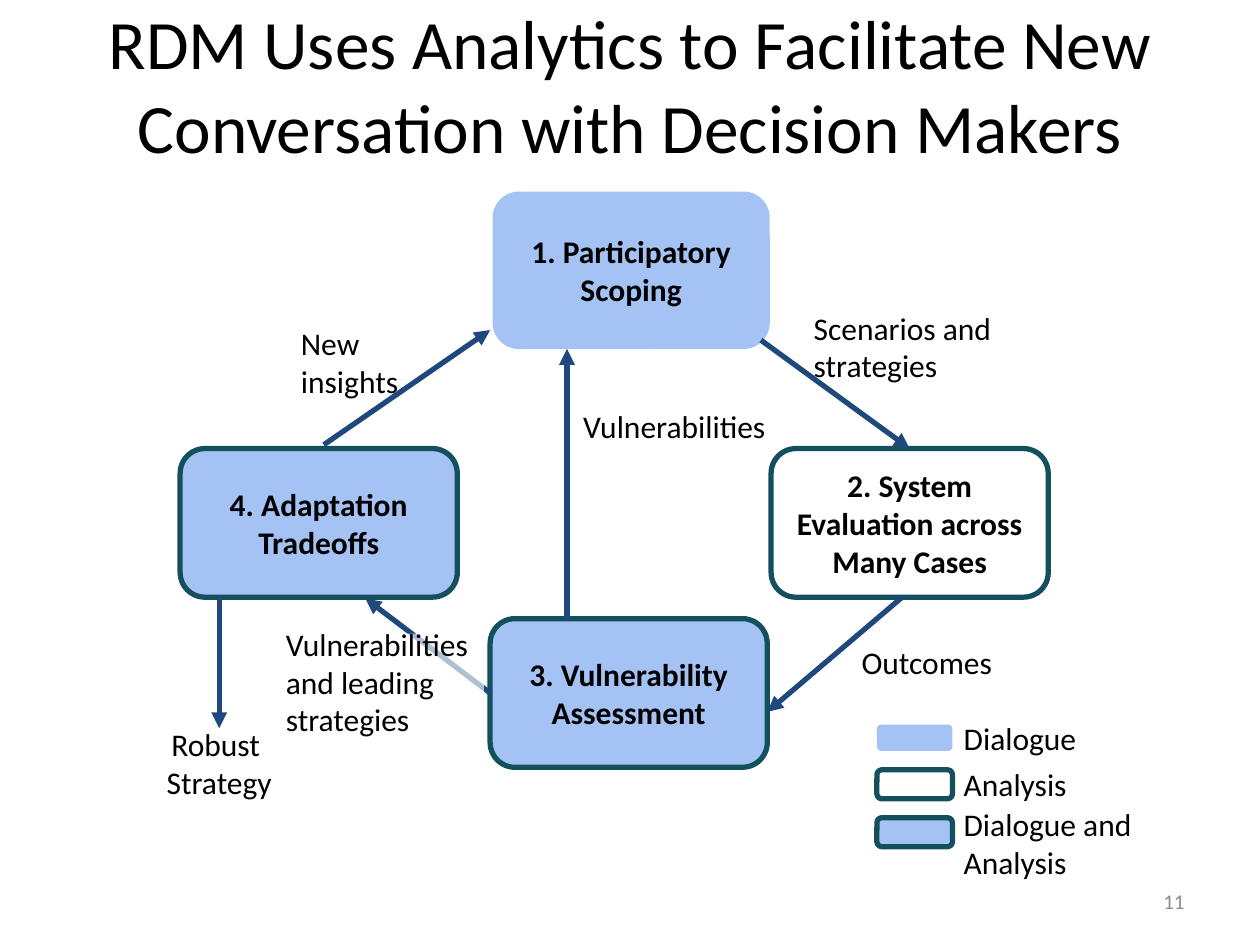
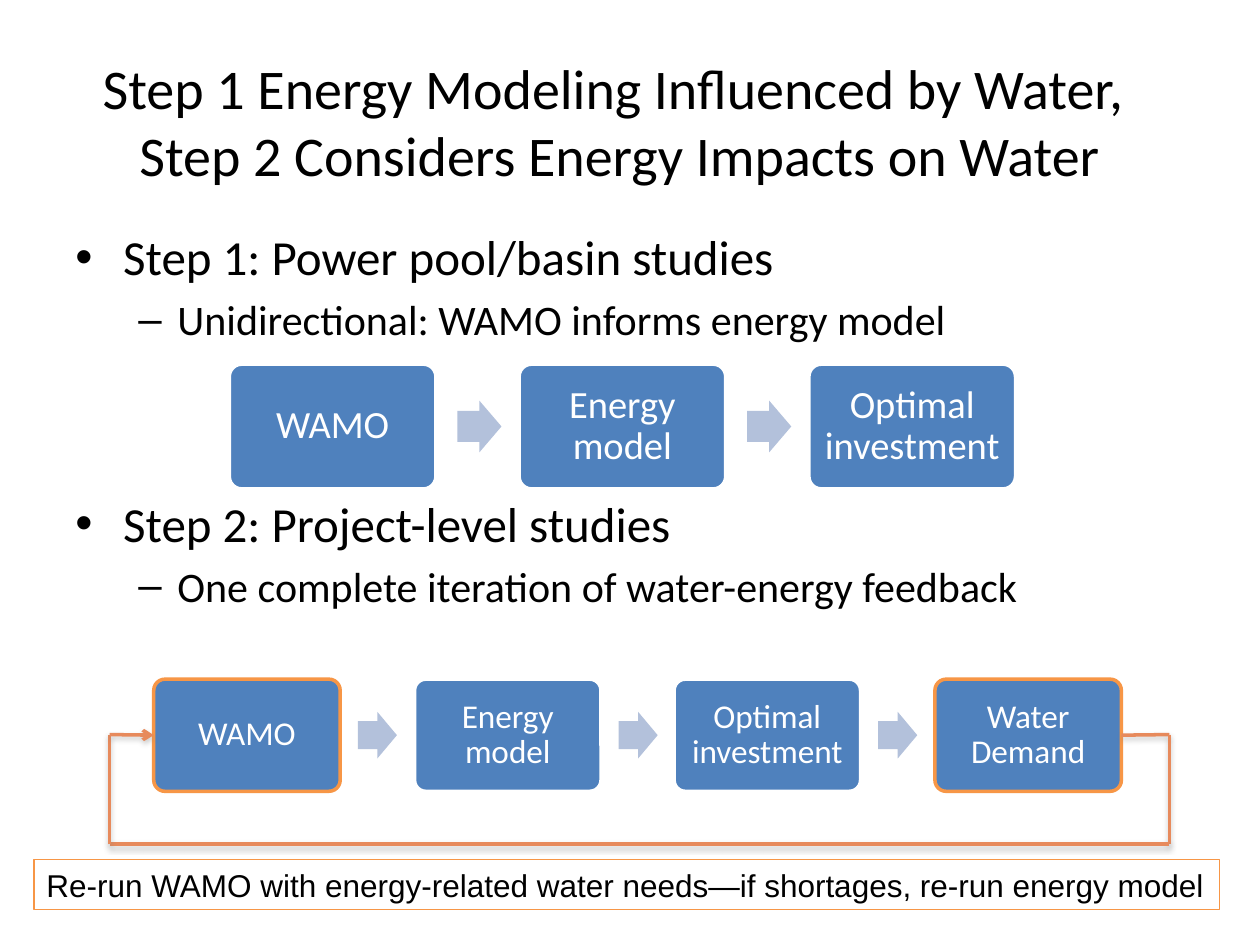
from dataclasses import dataclass
from lxml import etree
from pptx import Presentation, util as u
from pptx.dml.color import RGBColor
from pptx.enum import shapes, text
from pptx.oxml import parse_xml
from pptx.oxml.ns import qn, nsdecls

PX = 9144  # EMU per px, 100 px to the inch


@dataclass(frozen=True)
class Theme:
    font: str = "Calibri"
    note_font: str = "Arial"
    black: str = "000000"
    white: str = "FFFFFF"
    grey: str = "8C8C8C"
    dialogue: str = "A4C2F4"
    analysis: str = "134F5C"
    arrow: str = "1F497D"
    step: str = "4F81BD"
    step_arrow: str = "B3C1DB"
    feedback: str = "F79646"
    loop: str = "E78A5C"
    title: float = 39.6
    title_small: float = 32
    heading: float = 28
    sub: float = 24
    label: float = 18
    small: float = 12


T = Theme()
KIND = shapes.MSO_SHAPE
ALIGN = text.PP_ALIGN
ANCHOR = text.MSO_ANCHOR


def px(*values):
    return [u.Emu(round(v * PX)) for v in values]


def rgb(color):
    return RGBColor.from_string(color)


def write(sp, words, size, color=T.black, bold=False, align=ALIGN.LEFT,
          anchor=ANCHOR.MIDDLE, inset=(10, 10), font=T.font, wrap=True):
    tf = sp.text_frame
    tf.word_wrap = wrap
    tf.vertical_anchor = anchor
    tf.margin_left = tf.margin_right = px(inset[0])[0]
    tf.margin_top = tf.margin_bottom = px(inset[1])[0]
    tf.text = words
    for p in tf.paragraphs:
        p.alignment = align
        for r in p.runs:
            r.font.name, r.font.size, r.font.bold = font, u.Pt(size), bold
            r.font.color.rgb = rgb(color)
    return tf


def label(s, box, words, size=T.label, **style):
    return write(s.shapes.add_textbox(*px(*box)), words, size, **style)


def shape(s, kind, box, fill=None, line=None, width=3, adj=()):
    sp = s.shapes.add_shape(kind, *px(*box))
    sp.shadow.inherit = False
    for i, value in enumerate(adj):
        sp.adjustments[i] = value
    if fill:
        sp.fill.solid()
        sp.fill.fore_color.rgb = rgb(fill)
    else:
        sp.fill.background()
    if line:
        sp.line.color.rgb = rgb(line)
        sp.line.width = u.Pt(width)
    else:
        sp.line.fill.background()
    return sp


def connect(s, start, end, color, width, head=None, shadow=False):
    c = s.shapes.add_connector(shapes.MSO_CONNECTOR.STRAIGHT, *px(*start, *end))
    c.line.color.rgb = rgb(color)
    c.line.width = u.Pt(width)
    if head:
        etree.SubElement(c.line._get_or_add_ln(), qn("a:tailEnd"), type=head)
    effects = etree.SubElement(c._element.spPr, qn("a:effectLst"))
    if shadow:
        effects.append(parse_xml(
            f'<a:outerShdw {nsdecls("a")} blurRad="{u.Pt(3.1)}" dist="{u.Pt(1.6)}"'
            ' dir="5400000" rotWithShape="0"><a:srgbClr val="808080">'
            '<a:alpha val="38000"/></a:srgbClr></a:outerShdw>'))
    return c


def title(s, box, words, size):
    label(s, box, words, size, align=ALIGN.CENTER, inset=(10, 5))


# --- Slide 1: the cycle of steps ---

def cycle(s, x, y):
    # Step boxes
    steps = [
        ("1. Participatory Scoping", 248, 0, 125, T.dialogue, None),
        ("2. System Evaluation across Many Cases", 469, 204, 118, None, T.analysis),
        ("3. Vulnerability Assessment", 246, 339, 118, T.dialogue, T.analysis),
        ("4. Adaptation Tradeoffs", 0, 204, 118, T.dialogue, T.analysis),
    ]
    nodes = []
    for words, dx, dy, h, fill, line in steps:
        sp = shape(s, KIND.ROUNDED_RECTANGLE, (x + dx, y + dy, 220, h), fill, line,
                   adj=[0.167])
        write(sp, words, T.label, bold=True, align=ALIGN.CENTER)
        nodes.append(sp)
    scoping, evaluation, assessment, tradeoffs = nodes

    # Arrows between the steps
    ends = [
        ((461, 118), (579, 204)),
        ((573, 322), (466, 413)),
        ((246, 398), (147, 323)),
        ((114, 201), (246, 110)),
        ((307, 339), (307, 125)),
        ((31, 322), (31, 426)),
    ]
    arrows = [connect(s, (x + x1, y + y1), (x + x2, y + y2), T.arrow, 3, "triangle")
              for (x1, y1), (x2, y2) in ends]
    arrows[0].end_connect(evaluation, 0)
    arrows[2].begin_connect(assessment, 1)

    # Arrow labels
    veil = shape(s, KIND.RECTANGLE, (x + 74, y + 351, 167, 76), T.white)
    color = veil.fill._xPr.find(qn("a:solidFill"))[0]
    etree.SubElement(color, qn("a:alpha"), val="65000")
    write(veil, "Vulnerabilities\nand leading strategies", T.label)
    for words, dx, dy, w, h, align in [
        ("Scenarios and\nstrategies", 493, 85, 165, 76, ALIGN.LEFT),
        ("Outcomes", 531, 335, 140, 76, ALIGN.LEFT),
        ("Vulnerabilities", 310, 161, 172, 50, ALIGN.LEFT),
        ("Robust \nStrategy", -31, 426, 124, 55, ALIGN.CENTER),
        ("New\ninsights", 86, 110, 118, 50, ALIGN.LEFT),
    ]:
        label(s, (x + dx, y + dy, w, h), words, align=align)


def legend(s, x, y):
    for words, dy, h, fill, line, text_dy, w, text_h, anchor in [
        ("Dialogue", 0, 21, T.dialogue, None, -7, 118, 36, ANCHOR.MIDDLE),
        ("Analysis", 36, 23, None, T.analysis, 31, 118, 32, ANCHOR.MIDDLE),
        ("Dialogue and Analysis", 74, 23, T.dialogue, T.analysis, 54, 177, 61,
         ANCHOR.TOP),
    ]:
        shape(s, KIND.ROUNDED_RECTANGLE, (x, y + dy, 60, h), fill, line, adj=[0.167])
        label(s, (x + 59, y + text_dy, w, text_h), words, anchor=anchor)


def cycle_slide(s):
    title(s, (0, 33, 1000, 67),
          "RDM Uses Analytics to Facilitate New Conversation with Decision Makers",
          T.title)
    cycle(s, 143, 152)
    legend(s, 696, 575)
    label(s, (717, 695, 233, 40), "11", T.small, color=T.grey, align=ALIGN.RIGHT,
          inset=(10, 5))


# --- Slide 2: the two modelling steps ---

def outline(s, box):
    items = [  # words, is sub-point, space before
        ("Step 1: Power pool/basin studies", False, 5.6),
        ("Unidirectional: WAMO informs energy model", True, 4.8),
        ("Step 2: Project-level studies", False, 85),
        ("One complete iteration of water-energy feedback", True, 4.8),
    ]
    tf = label(s, box, "\n".join(words for words, _, _ in items), T.heading,
               anchor=ANCHOR.TOP, inset=(10, 5))
    for p, (_, is_sub, before) in zip(tf.paragraphs, items):
        left, hang, mark = (81, 31, "–") if is_sub else (38, 38, "•")
        p.level = int(is_sub)
        p.space_before = u.Pt(before)
        if is_sub:
            p.runs[0].font.size = u.Pt(T.sub)
        pPr = p._p.get_or_add_pPr()
        pPr.set("marL", str(left * PX))
        pPr.set("indent", str(-hang * PX))
        etree.SubElement(pPr, qn("a:buFont"), typeface=T.note_font)
        etree.SubElement(pPr, qn("a:buChar"), char=mark)


def flow(s, box, names, step_size, arrow_size, gap, inset, size, marked=()):
    """Row of equally spaced steps with an arrow in each gap."""
    x, y, w, h = box
    step_w = step_size
    arrow_w, arrow_h = arrow_size
    pitch = (w - step_w) / (len(names) - 1)
    steps = []
    for i, name in enumerate(names):
        left = x + round(i * pitch)
        line = T.feedback if i in marked else T.white
        sp = shape(s, KIND.ROUNDED_RECTANGLE, (left, y, step_w, h), T.step, line, 2,
                   adj=[0.1])
        tf = write(sp, name, size, T.white, align=ALIGN.CENTER, inset=(inset, inset))
        tf.paragraphs[0].line_spacing = 0.9
        steps.append(sp)
        if i < len(names) - 1:
            shape(s, KIND.RIGHT_ARROW,
                  (left + step_w + gap, y + (h - arrow_h) / 2, arrow_w, arrow_h),
                  T.step_arrow, adj=[0.6, 0.5])
    return steps


def feedback_loop(s, first, last, box):
    x, y, w, h = box
    corners = [(890, y), (x + w, y), (x + w, y + h), (x, y + h), (x, y), (122, y)]
    legs = list(zip(corners, corners[1:]))
    lines = [connect(s, a, b, T.loop, 2, "arrow" if b == corners[-1] else None, True)
             for a, b in legs]
    lines[0].begin_connect(last, 3)
    lines[-1].end_connect(first, 1)


def steps_slide(s):
    title(s, (17, 33, 950, 125),
          "Step 1 Energy Modeling Influenced by Water, \v"
          "Step 2 Considers Energy Impacts on Water", T.title_small)
    outline(s, (50, 175, 900, 495))
    names = ["WAMO", "Energy model", "Optimal investment", "Water Demand"]
    flow(s, (182, 289, 624, 99), names[:3], 164, (35, 41), 17, 9, 22)
    steps = flow(s, (122, 539, 768, 89), names, 148, (31, 37), 14, 8, 19,
                 marked=(0, 3))
    feedback_loop(s, steps[0], steps[-1], (87, 583, 841, 87))
    # Note under the loop
    note = shape(s, KIND.RECTANGLE, (27, 682, 941, 40), line=T.feedback, width=0.75)
    write(note, "Re-run WAMO with energy-related water needs—if shortages, "
          "re-run energy model", T.label, inset=(10, 5), font=T.note_font, wrap=False)


def main():
    prs = Presentation()
    prs.slide_width, prs.slide_height = px(1000, 750)
    for build in (cycle_slide, steps_slide):
        build(prs.slides.add_slide(prs.slide_layouts[6]))
    prs.save("out.pptx")


if __name__ == "__main__":
    main()
